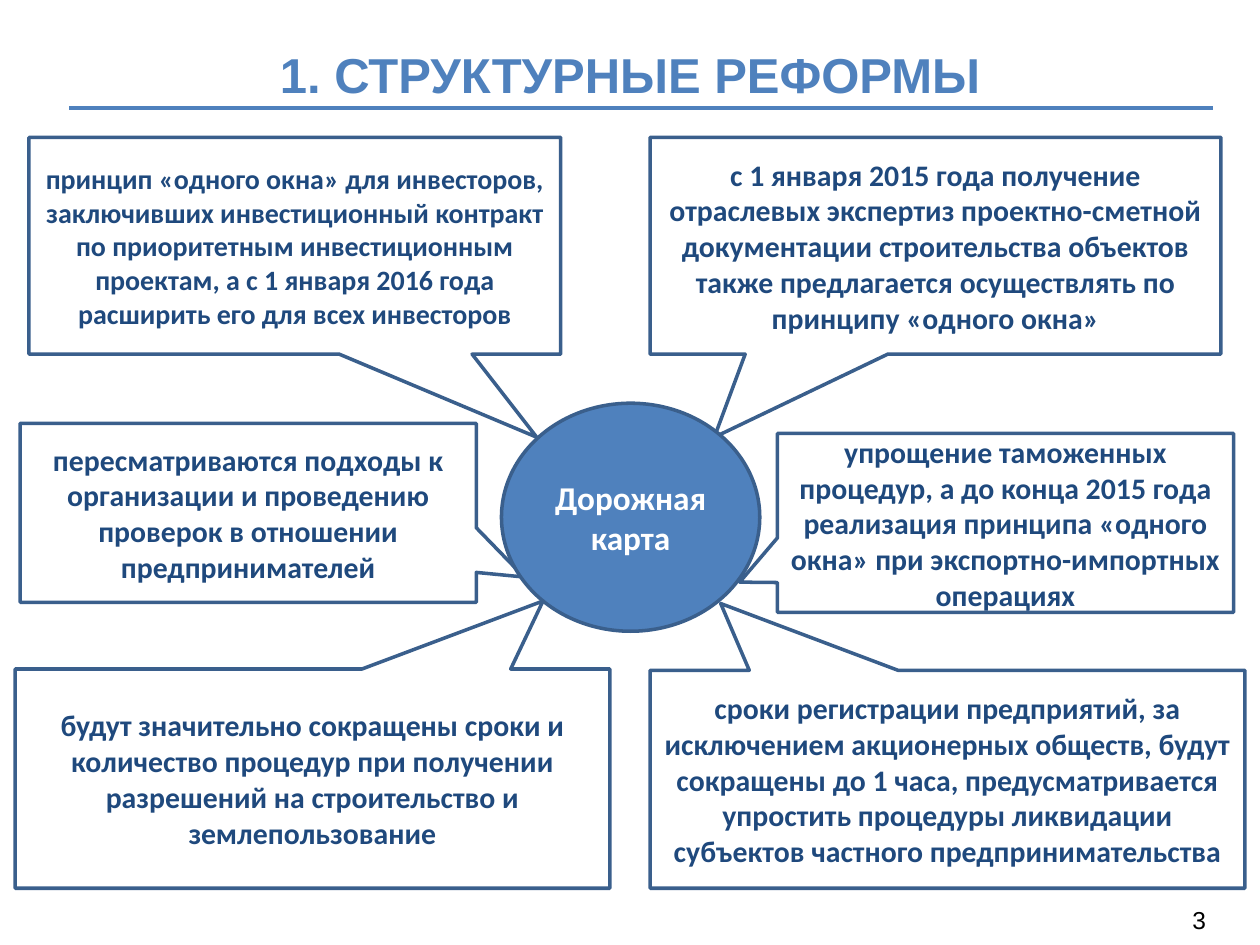
from dataclasses import dataclass

from pptx import Presentation
from pptx.dml.color import RGBColor
from pptx.enum.shapes import MSO_CONNECTOR, MSO_SHAPE
from pptx.enum.text import MSO_ANCHOR, MSO_AUTO_SIZE, PP_ALIGN
from pptx.oxml.ns import qn
from pptx.util import Inches, Pt


@dataclass(frozen=True)
class Theme:
    accent: RGBColor = RGBColor(0x4F, 0x81, 0xBD)
    outline: RGBColor = RGBColor(0x3A, 0x5F, 0x8C)
    navy: RGBColor = RGBColor(0x1F, 0x49, 0x7D)
    white: RGBColor = RGBColor(0xFF, 0xFF, 0xFF)
    black: RGBColor = RGBColor(0, 0, 0)
    heading_font: str = "Arial"
    body_font: str = "Calibri"
    title_size: int = 28
    hub_size: int = 19
    callout_size: int = 17
    small_callout_size: int = 16
    number_size: int = 14
    outline_width: float = 2
    rule_width: float = 2.25


THEME = Theme()

# Each callout: box (left, top, width, height), pointer tip (x, y), text, size
BACK_CALLOUTS = [
    ((5.16, 1.09, 4.53, 1.72), (5.67, 3.47),
     "с 1 января 2015 года получение отраслевых экспертиз проектно-сметной "
     "документации строительства объектов также предлагается осуществлять "
     "по принципу «одного окна»", THEME.callout_size),
    ((0.16, 3.36, 3.62, 1.42), (4.16, 4.58),
     "пересматриваются подходы к организации и проведению проверок "
     "в отношении предпринимателей", THEME.callout_size),
]
FRONT_CALLOUTS = [
    ((6.17, 3.44, 3.62, 1.42), (5.87, 4.62),
     "упрощение таможенных процедур, а до конца 2015 года реализация "
     "принципа «одного окна» при экспортно-импортных операциях",
     THEME.callout_size),
    ((0.12, 5.31, 4.72, 1.74), (4.31, 4.77),
     "будут значительно сокращены сроки и количество процедур при получении "
     "разрешений на строительство и землепользование", THEME.callout_size),
    ((5.16, 5.32, 4.72, 1.73), (5.72, 4.79),
     "сроки регистрации предприятий, за исключением акционерных обществ, "
     "будут сокращены до 1 часа, предусматривается упростить процедуры "
     "ликвидации субъектов частного предпринимательства",
     THEME.callout_size),
    ((0.23, 1.09, 4.22, 1.72), (4.26, 3.47),
     "принцип «одного окна» для инвесторов, заключивших инвестиционный "
     "контракт по приоритетным инвестиционным проектам, а с 1 января 2016 "
     "года расширить его для всех инвесторов", THEME.small_callout_size),
]


def write(sp, text, size, color, font=THEME.body_font, bold=True,
          align=PP_ALIGN.CENTER):
    tf = sp.text_frame
    tf.word_wrap = True
    tf.auto_size = MSO_AUTO_SIZE.NONE
    tf.vertical_anchor = MSO_ANCHOR.MIDDLE
    p = tf.paragraphs[0]
    p.alignment = align
    r = p.add_run()
    r.text = text
    r.font.name = font
    r.font.size = Pt(size)
    r.font.bold = bold
    r.font.color.rgb = color


def add_title(s, text):
    sp = s.shapes.title
    sp.left, sp.top = Inches(0.5), Inches(0.3)
    sp.width, sp.height = Inches(9), Inches(0.57)
    write(sp, text, THEME.title_size, THEME.accent, THEME.heading_font)


def add_rule(s, left, right, y):
    line = s.shapes.add_connector(MSO_CONNECTOR.STRAIGHT, Inches(left),
                                  Inches(y), Inches(right), Inches(y))
    line.line.color.rgb = THEME.accent
    line.line.width = Pt(THEME.rule_width)
    sp_pr = line._element.spPr
    sp_pr.append(sp_pr.makeelement(qn("a:effectLst"), {}))


def add_outlined(s, kind, box, fill):
    sp = s.shapes.add_shape(kind, *map(Inches, box))
    sp.shadow.inherit = False
    sp.fill.solid()
    sp.fill.fore_color.rgb = fill
    sp.line.color.rgb = THEME.outline
    sp.line.width = Pt(THEME.outline_width)
    return sp


def add_callout(s, box, tip, text, size):
    """Place a callout whose pointer ends at tip, given in slide inches."""
    sp = add_outlined(s, MSO_SHAPE.RECTANGULAR_CALLOUT, box, THEME.white)
    left, top, width, height = box
    sp.adjustments[0] = (tip[0] - left) / width - 0.5
    sp.adjustments[1] = (tip[1] - top) / height - 0.5
    write(sp, text, size, THEME.navy)


def add_hub(s, text):
    sp = add_outlined(s, MSO_SHAPE.OVAL, (3.98, 3.2, 2.05, 1.81), THEME.accent)
    write(sp, text, THEME.hub_size, THEME.white)


def add_page_number(s, number):
    sp = s.shapes.add_textbox(*map(Inches, (7.34, 7.1, 2.33, 0.4)))
    write(sp, str(number), THEME.number_size, THEME.black, THEME.heading_font,
          bold=False, align=PP_ALIGN.RIGHT)


def main():
    prs = Presentation()
    prs.slide_width, prs.slide_height = Inches(10), Inches(7.5)
    s = prs.slides.add_slide(prs.slide_layouts.get_by_name("Title Only"))
    add_page_number(s, 3)
    add_title(s, "1. СТРУКТУРНЫЕ РЕФОРМЫ")
    add_rule(s, 0.55, 9.63, 0.86)
    for callout in BACK_CALLOUTS:
        add_callout(s, *callout)
    add_hub(s, "Дорожная карта")
    for callout in FRONT_CALLOUTS:
        add_callout(s, *callout)
    prs.save("out.pptx")


if __name__ == "__main__":
    main()
